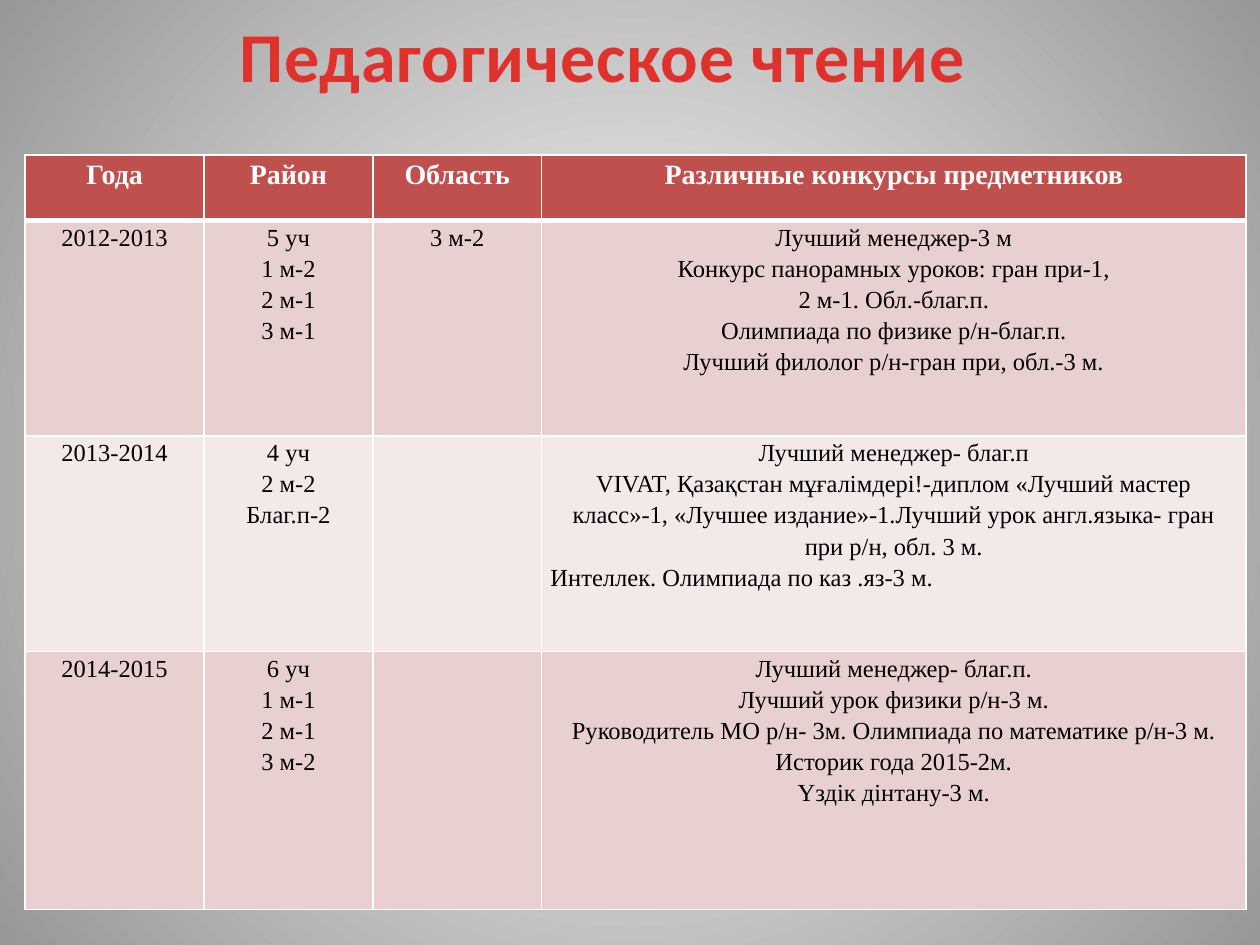
from lxml.etree import SubElement
from pptx import Presentation
from pptx.dml.color import RGBColor
from pptx.enum.text import MSO_ANCHOR, PP_ALIGN
from pptx.oxml import parse_xml
from pptx.oxml.ns import nsdecls, qn
from pptx.util import Inches, Pt

WHITE = RGBColor(0xFF, 0xFF, 0xFF)
BLACK = RGBColor(0, 0, 0)
GRAY = RGBColor(0x97, 0x97, 0x97)
RED = RGBColor(0xE0, 0x32, 0x2D)
HEADER_FILL = RGBColor(0xC0, 0x50, 0x4D)
BAND_FILLS = (RGBColor(0xF4, 0xE9, 0xE9), RGBColor(0xE8, 0xD0, 0xD0))

COL_WIDTHS = (1.42, 1.34, 1.34, 5.59)
ROW_HEIGHTS = (0.52, 1.71, 1.71, 2.05)
LEFT_ALIGNED = "Интеллек. Олимпиада по каз .яз-3 м."
ROWS = (
    ("Года", "Район", "Область", "Различные конкурсы предметников"),
    ("2012-2013", "5 уч\n1 м-2\n2 м-1\n3 м-1", "3 м-2",
     "Лучший менеджер-3 м\n"
     "Конкурс панорамных уроков: гран при-1,\n"
     "2 м-1. Обл.-благ.п.\n"
     "Олимпиада по физике р/н-благ.п.\n"
     "Лучший филолог р/н-гран при, обл.-3 м."),
    ("2013-2014", "4 уч\n2 м-2\nБлаг.п-2", "",
     "Лучший менеджер- благ.п\n"
     "VIVAT, Қазақстан мұғалімдері!-диплом «Лучший мастер класс»-1, "
     "«Лучшее издание»-1.Лучший урок англ.языка- гран при р/н, обл. 3 м.\n"
     + LEFT_ALIGNED),
    ("2014-2015", "6 уч\n1 м-1\n2 м-1\n3 м-2", "",
     "Лучший менеджер- благ.п.\n"
     "Лучший урок физики р/н-3 м.\n"
     "Руководитель МО р/н- 3м. Олимпиада по математике р/н-3 м.\n"
     "Историк года 2015-2м.\n"
     "Үздік дінтану-3 м."),
)


def set_background(s):
    """Fill the slide with a circular gradient from white to gray."""
    fill = s.background.fill
    fill.gradient()
    for stop, color, position in zip(fill.gradient_stops, (WHITE, GRAY), (0, 1)):
        stop.color.rgb = color
        stop.position = position
    grad = s.element.find(".//" + qn("a:gradFill"))
    grad.remove(grad.find(qn("a:lin")))
    path = SubElement(grad, qn("a:path"), path="circle")
    SubElement(path, qn("a:fillToRect"), l="50000", t="50000", r="50000", b="50000")


def format_run(r, font, size, color, bold):
    """Set the font of one run."""
    r.font.name = font
    r.font.size = Pt(size)
    r.font.color.rgb = color
    r.font.bold = bold


def add_title(s, left, top, width, height):
    """Place the slide title in the given box."""
    sp = s.shapes.title
    sp.left, sp.top, sp.width, sp.height = map(Inches, (left, top, width, height))
    tf = sp.text_frame
    tf.text = "Педагогическое чтение"
    tf.word_wrap = False
    tf.vertical_anchor = MSO_ANCHOR.TOP
    p = tf.paragraphs[0]
    p.alignment = PP_ALIGN.CENTER
    r = p.runs[0]
    format_run(r, "Calibri", 40, RED, True)
    r.font._element.set("spc", "50")


def set_borders(cell, bottom):
    """Draw white cell borders, with the bottom one of the given width."""
    tc_pr = cell._tc.get_or_add_tcPr()
    for i, side in enumerate("LRTB"):
        width = Pt(bottom if side == "B" else 1)
        tc_pr.insert(i, parse_xml(
            f'<a:ln{side} {nsdecls("a")} w="{width}"><a:solidFill>'
            f'<a:srgbClr val="{WHITE}"/></a:solidFill></a:ln{side}>'))


def fill_cell(cell, text, is_header, fill):
    """Write and format one table cell."""
    cell.margin_left = cell.margin_right = Inches(0.07)
    cell.margin_top = cell.margin_bottom = 0
    cell.fill.solid()
    cell.fill.fore_color.rgb = fill
    set_borders(cell, 3 if is_header else 1)
    cell.text_frame.text = text
    size, color = (16, WHITE) if is_header else (14, BLACK)
    for p in cell.text_frame.paragraphs:
        p.alignment = PP_ALIGN.LEFT if p.text == LEFT_ALIGNED else PP_ALIGN.CENTER
        p.line_spacing = 1.15
        for r in p.runs:
            format_run(r, "Times New Roman", size, color, is_header)


def add_results_table(s, left, top, width, height):
    """Place the table of results by year in the given box."""
    box = map(Inches, (left, top, width, height))
    table = s.shapes.add_table(len(ROWS), len(COL_WIDTHS), *box).table
    for column, size in zip(table.columns, COL_WIDTHS):
        column.width = Inches(size)
    for i, (row, size) in enumerate(zip(table.rows, ROW_HEIGHTS)):
        row.height = Inches(size)
        fill = BAND_FILLS[i % 2] if i else HEADER_FILL
        for cell, text in zip(row.cells, ROWS[i]):
            fill_cell(cell, text, i == 0, fill)


def main():
    """Build and save the slide."""
    prs = Presentation()
    prs.slide_width, prs.slide_height = Inches(10), Inches(7.5)
    s = prs.slides.add_slide(prs.slide_layouts[5])
    set_background(s)
    add_results_table(s, 0.2, 1.23, sum(COL_WIDTHS), sum(ROW_HEIGHTS))
    add_title(s, 1.77, 0.05, 6.03, 0.77)
    prs.save("out.pptx")


if __name__ == "__main__":
    main()
